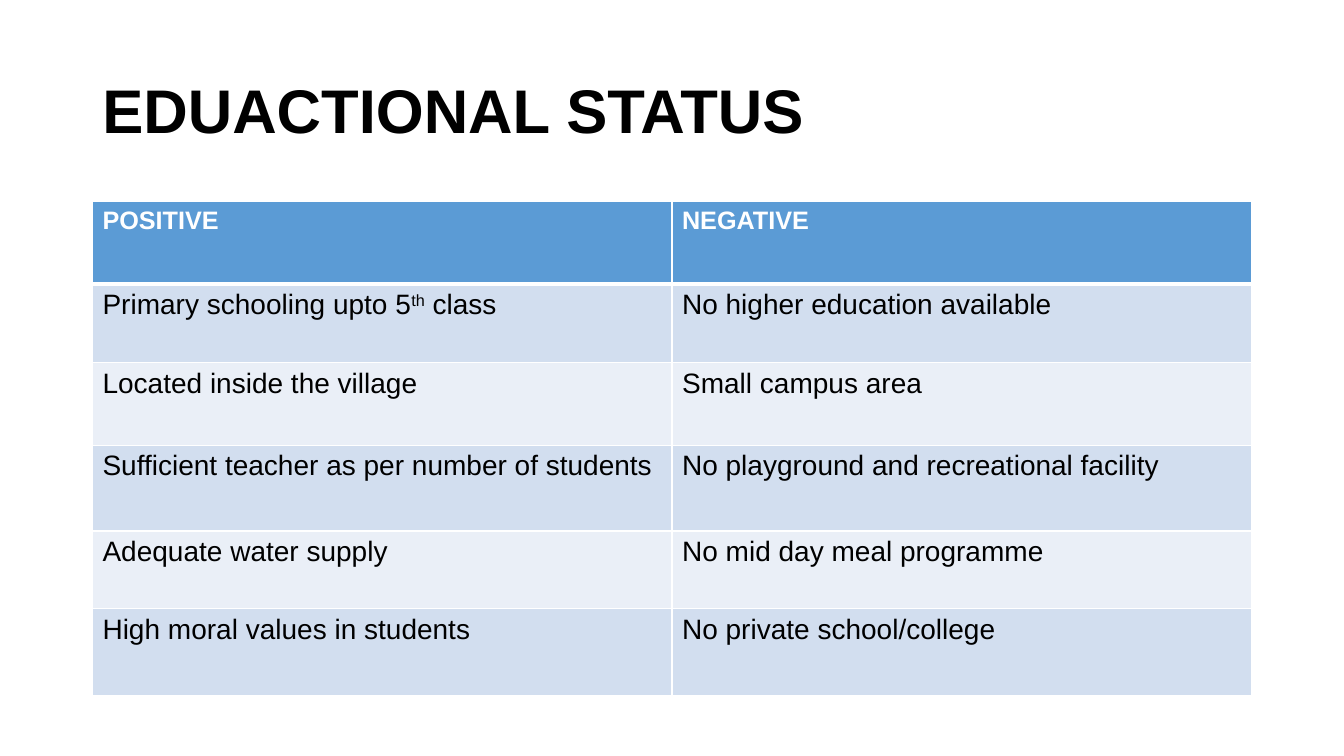
from lxml import etree
from pptx import Presentation
from pptx.dml.color import RGBColor
from pptx.enum.text import MSO_ANCHOR
from pptx.oxml.ns import qn
from pptx.util import Cm, Pt


def rgb(value):
    return RGBColor.from_string(value)


class Deck:
    FONT = "Arial"
    BLACK, WHITE = "000000", "FFFFFF"
    HEADER, BANDS = "5B9BD5", ("D2DEEF", "EAEFF7")

    def __init__(self, prs):
        self.s = prs.slides.add_slide(prs.slide_layouts[6])

    def text(self, tf, parts, size, color, bold=False):
        """Fill the first paragraph; every second part is superscript."""
        p = tf.paragraphs[0]
        p.font.name, p.font.size, p.font.bold = self.FONT, Pt(size), bold
        p.font.color.rgb = rgb(color)
        for i, part in enumerate(parts):
            r = p.add_run()
            r.text = part
            if i % 2:
                r._r.get_or_add_rPr().set("baseline", "30000")
        return p

    def title(self, text, left, top, width, height):
        tf = self.s.shapes.add_textbox(Cm(left), Cm(top), Cm(width), Cm(height)).text_frame
        tf.word_wrap = True
        tf.vertical_anchor = MSO_ANCHOR.MIDDLE
        self.text(tf, [text], 44, self.BLACK, bold=True).line_spacing = 0.9

    def border(self, cell, side, width):
        tcPr = cell._tc.get_or_add_tcPr()
        ln = etree.SubElement(tcPr, qn(f"a:ln{side}"), w=str(Pt(width)))
        fill = etree.SubElement(ln, qn("a:solidFill"))
        etree.SubElement(fill, qn("a:srgbClr"), val=self.WHITE)

    def table(self, rows, heights, left, top, width):
        cols = len(rows[0])
        table = self.s.shapes.add_table(
            len(rows), cols, Cm(left), Cm(top), Cm(width), Cm(sum(heights))).table
        for i, (row, height) in enumerate(zip(rows, heights)):
            table.rows[i].height = Cm(height)
            for j, text in enumerate(row):
                cell = table.cell(i, j)
                # Borders, with a heavier rule under the header
                for side in "LRTB":
                    heavy = (i, side) in ((0, "B"), (1, "T"))
                    self.border(cell, side, 3 if heavy else 1)
                # Fill and text
                cell.fill.solid()
                cell.fill.fore_color.rgb = rgb(self.BANDS[(i - 1) % 2] if i else self.HEADER)
                parts = text.split("^")
                if i:
                    self.text(cell.text_frame, parts, 20, self.BLACK)
                else:
                    self.text(cell.text_frame, parts, 18, self.WHITE, bold=True)


# Carets enclose superscript text
ROWS = [
    ("POSITIVE", "NEGATIVE"),
    ("Primary schooling upto 5^th^ class", "No higher education available"),
    ("Located inside the village", "Small campus area"),
    ("Sufficient teacher as per number of students", "No playground and recreational facility"),
    ("Adequate water supply", "No mid day meal programme"),
    ("High moral values in students", "No private school/college"),
]
HEIGHTS = [2.08, 1.98, 2.08, 2.16, 1.96, 2.18]


def main():
    prs = Presentation()
    prs.slide_width, prs.slide_height = Cm(33.87), Cm(19.05)
    deck = Deck(prs)
    deck.title("EDUACTIONAL STATUS", 2.33, 1.01, 29.21, 3.68)
    deck.table(ROWS, HEIGHTS, 2.33, 5.08, 29.21)
    prs.save("out.pptx")


if __name__ == "__main__":
    main()
